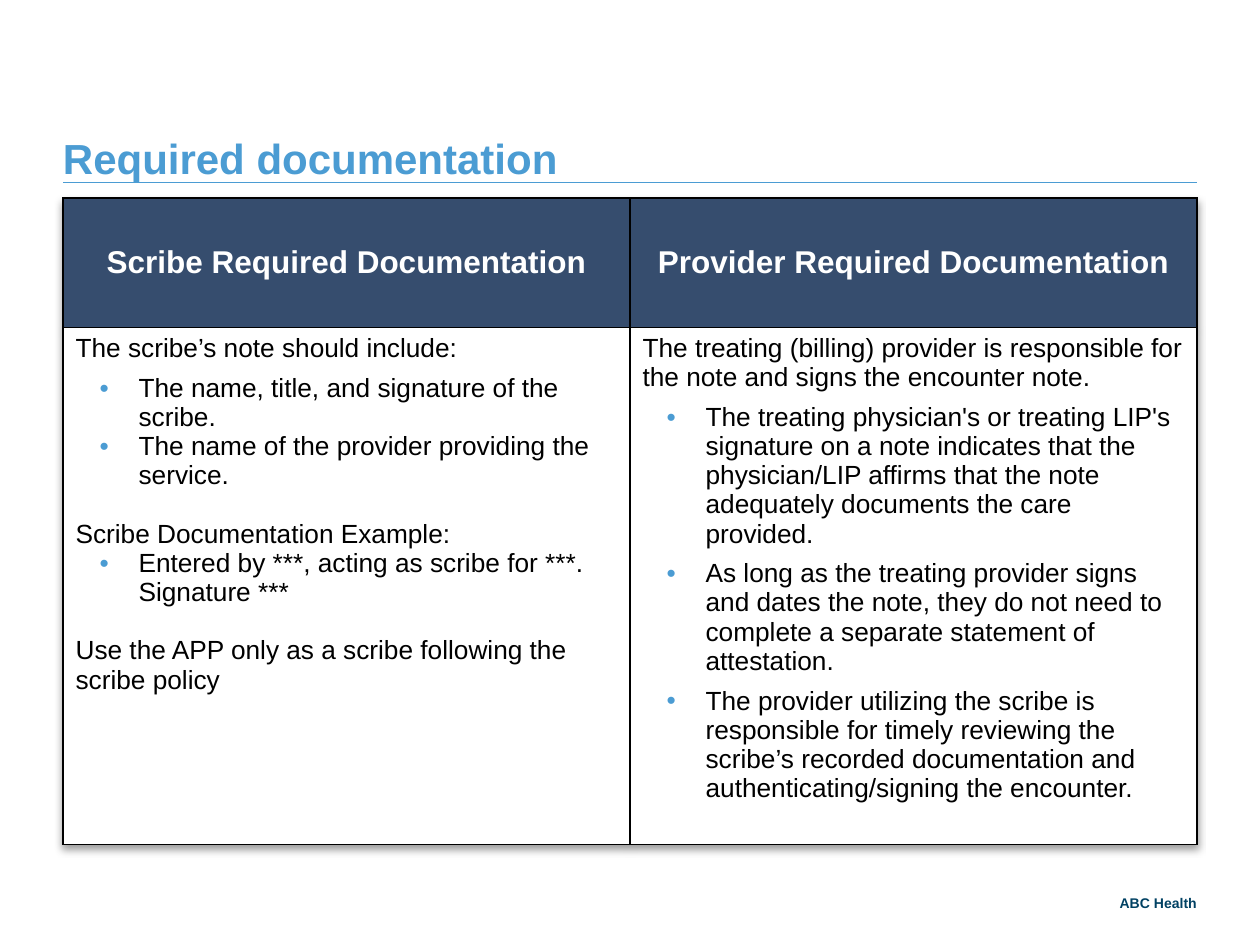
from dataclasses import dataclass
from typing import Any

from lxml.etree import SubElement
from pptx import Presentation
from pptx.dml.color import RGBColor
from pptx.enum.shapes import MSO_CONNECTOR as Connector
from pptx.enum.text import MSO_ANCHOR as Anchor, PP_ALIGN as Align
from pptx.oxml import parse_xml
from pptx.oxml.ns import nsdecls, qn
from pptx.util import Inches, Pt


@dataclass(frozen=True)
class Theme:
    font: str = "Arial"
    accent: str = "4B9CD3"
    header: str = "364D6E"
    footer: str = "004163"
    dark: str = "000000"
    light: str = "FFFFFF"
    title_size: float = 24
    header_size: float = 18
    body_size: float = 15
    footer_size: float = 8


@dataclass(frozen=True)
class Entry:
    text: str
    bullet: bool = False
    before: float = 0
    after: float = 0


@dataclass(frozen=True)
class Column:
    heading: str
    entries: tuple[Entry, ...]


THEME = Theme()
SECTION_GAP = 16.7
ENTRY_GAP = 6
LEFT, WIDTH = 0.5, 9
ROW_HEIGHTS = (1.03, 3.83)

COLUMNS = (
    Column("Scribe Required Documentation", (
        Entry("The scribe’s note should include:", after=ENTRY_GAP),
        Entry("The name, title, and signature of the scribe.", bullet=True),
        Entry("The name of the provider providing the service.", bullet=True),
        Entry("Scribe Documentation Example:", before=SECTION_GAP),
        Entry("Entered by ***, acting as scribe for ***. Signature ***", bullet=True),
        Entry("Use the APP only as a scribe following the scribe policy",
              before=SECTION_GAP),
    )),
    Column("Provider Required Documentation", (
        Entry("The treating (billing) provider is responsible for the note and "
              "signs the encounter note.", after=ENTRY_GAP),
        Entry("The treating physician's or treating LIP's signature on a note "
              "indicates that the physician/LIP affirms that the note adequately "
              "documents the care provided.", bullet=True, after=ENTRY_GAP),
        Entry("As long as the treating provider signs and dates the note, they do "
              "not need to complete a separate statement of attestation.",
              bullet=True, after=ENTRY_GAP),
        Entry("The provider utilizing the scribe is responsible for timely "
              "reviewing the scribe’s recorded documentation and "
              "authenticating/signing the encounter.", bullet=True, after=ENTRY_GAP),
    )),
)


def apply(target: Any, values: dict[str, Any]) -> None:
    for attribute, value in values.items():
        setattr(target, attribute, value)


def write(paragraph: Any, text: str, size: float, color: str,
          bold: bool = False, **layout: Any) -> None:
    """Fill a paragraph with one styled run and set its paragraph format."""
    apply(paragraph, layout)
    run = paragraph.add_run()
    run.text = text
    apply(run.font, {"name": THEME.font, "size": Pt(size), "bold": bold})
    run.font.color.rgb = RGBColor.from_string(color)


def add_label(slide: Any, box: tuple[float, ...], insets: tuple[float, ...],
              text: str, size: float, color: str, **layout: Any) -> None:
    """Add bold, bottom-anchored text; insets run left, top, right, bottom."""
    frame = slide.shapes.add_textbox(*map(Inches, box)).text_frame
    sides = ("margin_left", "margin_top", "margin_right", "margin_bottom")
    apply(frame, {"word_wrap": True, "vertical_anchor": Anchor.BOTTOM,
                  **dict(zip(sides, map(Inches, insets)))})
    write(frame.paragraphs[0], text, size, color, bold=True, **layout)


def add_rule(slide: Any, y: float) -> None:
    rule = slide.shapes.add_connector(
        Connector.STRAIGHT, Inches(LEFT), Inches(y), Inches(LEFT + WIDTH), Inches(y))
    rule.line.color.rgb = RGBColor.from_string(THEME.accent)
    rule.line.width = Pt(0.5)
    SubElement(rule.element.spPr, qn("a:effectLst"))


def add_bullet(paragraph: Any) -> None:
    properties = paragraph._p.get_or_add_pPr()
    properties.set("marL", str(Inches(0.5)))
    properties.set("indent", str(Inches(-0.31)))
    color = SubElement(properties, qn("a:buClr"))
    SubElement(color, qn("a:srgbClr"), val=THEME.accent)
    SubElement(properties, qn("a:buFont"), typeface=THEME.font)
    SubElement(properties, qn("a:buChar"), char="•")


def style_cell(cell: Any, fill: str, anchor: Any) -> None:
    properties = cell._tc.get_or_add_tcPr()
    for side in ("lnL", "lnR", "lnT", "lnB"):
        border = SubElement(properties, qn(f"a:{side}"), w=str(Pt(1)))
        paint = SubElement(border, qn("a:solidFill"))
        SubElement(paint, qn("a:srgbClr"), val=THEME.dark)
    cell.fill.solid()
    cell.fill.fore_color.rgb = RGBColor.from_string(fill)
    cell.vertical_anchor = anchor


def add_table_shadow(table: Any) -> None:
    table._tbl.tblPr.insert(0, parse_xml(
        f'<a:effectLst {nsdecls("a")}>'
        '<a:outerShdw blurRad="50800" dist="38100" dir="5400000">'
        f'<a:srgbClr val="{THEME.dark}"><a:alpha val="40000"/></a:srgbClr>'
        '</a:outerShdw></a:effectLst>'))


def write_entries(frame: Any, entries: tuple[Entry, ...]) -> None:
    for index, entry in enumerate(entries):
        paragraph = frame.add_paragraph() if index else frame.paragraphs[0]
        write(paragraph, entry.text, THEME.body_size, THEME.dark,
              space_before=Pt(entry.before), space_after=Pt(entry.after))
        if entry.bullet:
            add_bullet(paragraph)


def add_documentation_table(slide: Any, top: float) -> None:
    table = slide.shapes.add_table(
        len(ROW_HEIGHTS), len(COLUMNS), Inches(LEFT), Inches(top),
        Inches(WIDTH), Inches(sum(ROW_HEIGHTS))).table
    apply(table, {"first_row": False, "horz_banding": False})
    add_table_shadow(table)
    for row, height in zip(table.rows, ROW_HEIGHTS):
        row.height = Inches(height)
    for index, column in enumerate(COLUMNS):
        heading, body = table.cell(0, index), table.cell(1, index)
        style_cell(heading, THEME.header, Anchor.MIDDLE)
        style_cell(body, THEME.light, Anchor.TOP)
        write(heading.text_frame.paragraphs[0], column.heading, THEME.header_size,
              THEME.light, bold=True, alignment=Align.CENTER)
        write_entries(body.text_frame, column.entries)


def main() -> None:
    deck = Presentation()
    apply(deck, {"slide_width": Inches(10), "slide_height": Inches(7.5)})
    slide = deck.slides.add_slide(deck.slide_layouts[6])
    add_label(slide, (8.27, 7, 1.23, 0.23), (0, 0, 0, 0), "ABC Health",
              THEME.footer_size, THEME.footer, alignment=Align.RIGHT)
    add_rule(slide, 1.45)
    add_label(slide, (LEFT, 0.38, WIDTH, 0.79), (0, 0.95, 1.5, 0),
              "Required documentation", THEME.title_size, THEME.accent,
              line_spacing=Pt(28))
    add_documentation_table(slide, 1.57)
    deck.save("out.pptx")


if __name__ == "__main__":
    main()
